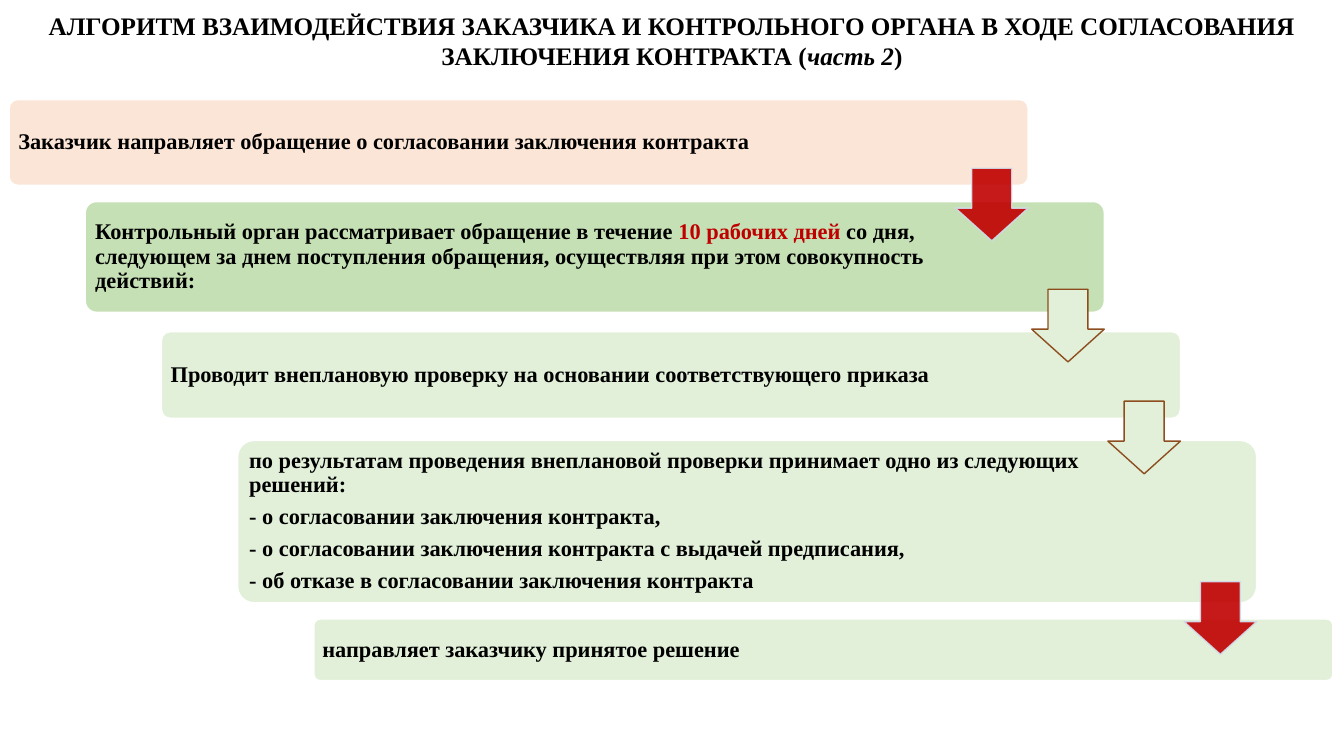
import pptx
import pptx.dml.color
import pptx.enum.shapes
import pptx.enum.text
import pptx.oxml
import pptx.oxml.ns
import pptx.util
from pptx.util import Cm

FONT = "Times New Roman"
BLACK, RED = "000000", "C00000"
PEACH, GREEN, PALE_GREEN = "FBE5D6", "C5E0B4", "E2F0D9"
WHITE, PALE_BLUE, BROWN = "FFFFFF", "D2DEEF", "843C0B"
STEP_LEFT, STEP_SHIFT, STEP_WIDTH = 0.23, 1.92, 25.68
ARROW_LEFT, ARROW_SIZE = 24.08, 1.83

# Each step: top and height in cm, fill, paragraphs made of (text, colour) spans
STEPS = [
    (2.51, 2.16, PEACH, [[("Заказчик направляет обращение о согласовании заключения контракта", BLACK)]]),
    (5.08, 2.79, GREEN, [[
        ("Контрольный орган рассматривает обращение в течение ", BLACK),
        ("10 рабочих дней ", RED),
        ("со дня, следующем за днем поступления обращения, осуществляя при этом совокупность действий:", BLACK),
    ]]),
    (8.36, 2.18, PALE_GREEN, [[("Проводит внеплановую проверку на основании соответствующего приказа", BLACK)]]),
    (11.1, 4.09, PALE_GREEN, [
        [("по результатам проведения внеплановой проверки принимает одно из следующих решений:", BLACK)],
        [("- о согласовании заключения контракта,", BLACK)],
        [("- о согласовании заключения контракта с выдачей предписания,", BLACK)],
        [("- об отказе в согласовании заключения контракта", BLACK)],
    ]),
    (15.6, 1.55, PALE_GREEN, [[("направляет заказчику принятое решение", BLACK)]]),
]

# Each arrow: top in cm, fill, outline, fill opacity in percent
ARROWS = [
    (4.24, RED, PALE_BLUE, 90),
    (7.29, PALE_GREEN, BROWN, 100),
    (10.11, PALE_GREEN, BROWN, 100),
    (14.66, RED, PALE_BLUE, 90),
]


def colour(value):
    return pptx.dml.color.RGBColor.from_string(value)


def set_opacity(fill_parent, percent):
    """Set the opacity of the solid fill directly under an element."""
    solid = fill_parent.find(pptx.oxml.ns.qn("a:solidFill"))
    alpha = pptx.oxml.parse_xml(f'<a:alpha {pptx.oxml.ns.nsdecls("a")} val="{percent * 1000}"/>')
    solid[0].append(alpha)


def set_font(para, size):
    para.font.name = FONT
    para.font.size = pptx.util.Pt(size)
    para.font.bold = True


def add_span(para, text, value=BLACK):
    span = para.add_run()
    span.text = text
    span.font.color.rgb = colour(value)
    return span


def add_preset(page, kind, left, top, width, height, fill, outline):
    shape = page.shapes.add_shape(kind, Cm(left), Cm(top), Cm(width), Cm(height))
    shape.shadow.inherit = False
    shape.fill.solid()
    shape.fill.fore_color.rgb = colour(fill)
    shape.line.color.rgb = colour(outline)
    shape.line.width = pptx.util.Pt(1)
    return shape


def fill_title(page):
    title = page.shapes.title
    title.left, title.top, title.width, title.height = Cm(0), Cm(0.33), Cm(33.87), Cm(1.37)
    frame = title.text_frame
    frame.auto_size = pptx.enum.text.MSO_AUTO_SIZE.NONE
    frame.vertical_anchor = pptx.enum.text.MSO_ANCHOR.MIDDLE
    para = frame.paragraphs[0]
    para.alignment = pptx.enum.text.PP_ALIGN.CENTER
    set_font(para, 18)
    add_span(para, "АЛГОРИТМ ВЗАИМОДЕЙСТВИЯ ЗАКАЗЧИКА И КОНТРОЛЬНОГО ОРГАНА "
                   "В ХОДЕ СОГЛАСОВАНИЯ ЗАКЛЮЧЕНИЯ КОНТРАКТА (")
    add_span(para, "часть 2").font.italic = True
    add_span(para, ")")


def add_step(page, index, top, height, fill, paragraphs):
    box = add_preset(page, pptx.enum.shapes.MSO_SHAPE.ROUNDED_RECTANGLE,
                     STEP_LEFT + index * STEP_SHIFT, top, STEP_WIDTH, height, fill, WHITE)
    box.adjustments[0] = 0.1
    frame = box.text_frame
    frame.word_wrap = True
    frame.vertical_anchor = pptx.enum.text.MSO_ANCHOR.MIDDLE
    frame.margin_left = frame.margin_top = frame.margin_bottom = Cm(0.17)
    frame.margin_right = Cm(3.9)  # keeps the text clear of the arrows
    for number, spans in enumerate(paragraphs):
        para = frame.add_paragraph() if number else frame.paragraphs[0]
        para.alignment = pptx.enum.text.PP_ALIGN.LEFT
        para.line_spacing = 0.9
        para.space_after = pptx.util.Pt(5.6)
        set_font(para, 16)
        for text, value in spans:
            add_span(para, text, value)


def add_arrow(page, index, top, fill, outline, opacity):
    arrow = add_preset(page, pptx.enum.shapes.MSO_SHAPE.DOWN_ARROW,
                       ARROW_LEFT + index * STEP_SHIFT, top, ARROW_SIZE, ARROW_SIZE, fill, outline)
    arrow.adjustments[0] = 0.55
    arrow.adjustments[1] = 0.45
    properties = arrow.element.spPr
    if opacity < 100:
        set_opacity(properties, opacity)
    set_opacity(properties.find(pptx.oxml.ns.qn("a:ln")), 90)


def main():
    deck = pptx.Presentation()
    deck.slide_width, deck.slide_height = Cm(33.87), Cm(19.05)
    page = deck.slides.add_slide(deck.slide_layouts[5])
    fill_title(page)
    # Staircase of steps, then the arrows over them
    for index, step in enumerate(STEPS):
        add_step(page, index, *step)
    for index, arrow in enumerate(ARROWS):
        add_arrow(page, index, *arrow)
    deck.save("out.pptx")


if __name__ == "__main__":
    main()
